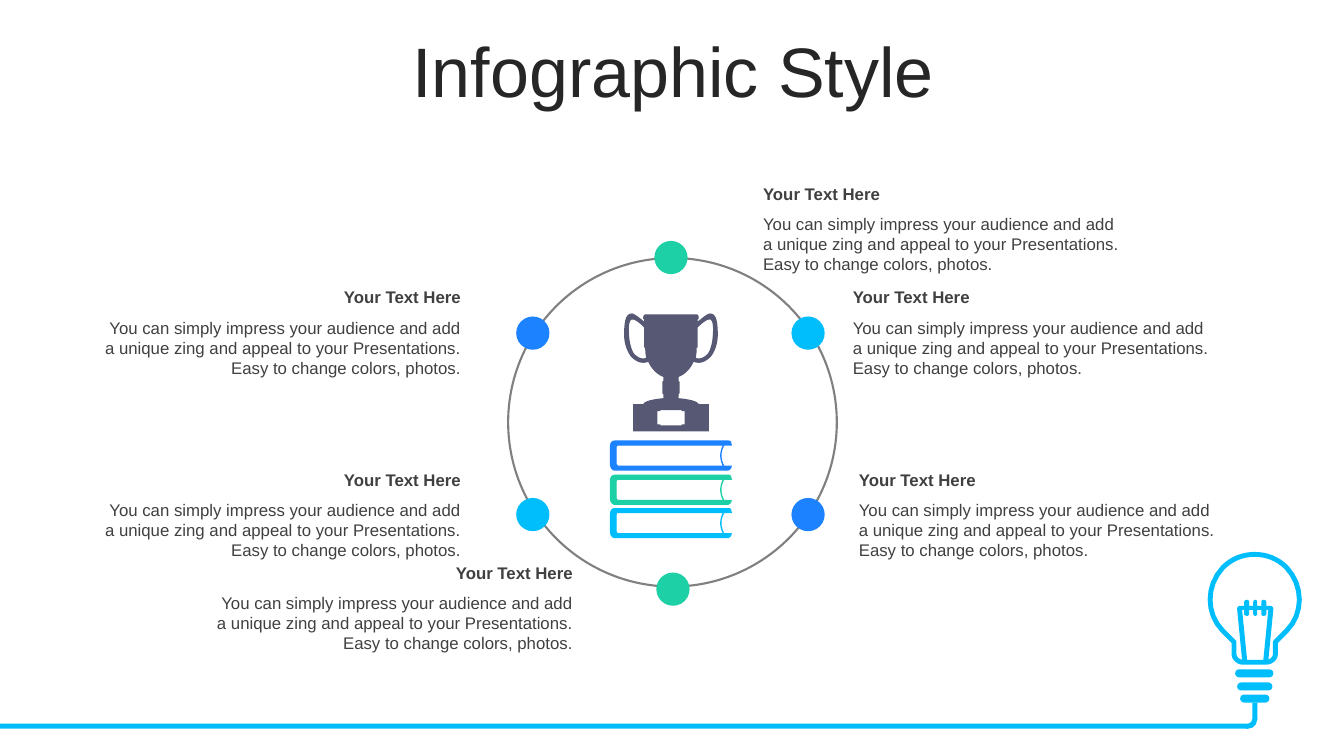
"""Builds the "Infographic Style" slide: six captions around a ring with a trophy, plus a light bulb."""
from dataclasses import dataclass

from pptx import Presentation
from pptx.dml.color import RGBColor
from pptx.enum.shapes import MSO_SHAPE
from pptx.enum.text import MSO_ANCHOR, MSO_AUTO_SIZE, PP_ALIGN
from pptx.util import Emu, Pt

PX = 9144
CURVE_STEPS = 8
LEFT, CENTER, RIGHT = PP_ALIGN.LEFT, PP_ALIGN.CENTER, PP_ALIGN.RIGHT
MIDDLE = MSO_ANCHOR.MIDDLE
FIT_SHAPE, NO_FIT = MSO_AUTO_SIZE.SHAPE_TO_FIT_TEXT, MSO_AUTO_SIZE.NONE
RECT, ROUND_RECT = MSO_SHAPE.RECTANGLE, MSO_SHAPE.ROUNDED_RECTANGLE
OVAL, ARC = MSO_SHAPE.OVAL, MSO_SHAPE.BLOCK_ARC

FONT = "Arial"
CYAN, BLUE, GREEN = "00BDFB", "1C82FF", "1ED0A6"
SLATE, GREY, WHITE = "565874", "808080", "FFFFFF"
TITLE_INK, TEXT_INK = "262626", "404040"

HEADING = "Your Text Here"
BODY = ("You can simply impress your audience and add a unique zing and appeal "
        "to your Presentations. Easy to change colors, photos.")

Point = tuple[float, float]
Outline = list[Point]
Segments = list[tuple[int, ...]]


@dataclass(frozen=True)
class Caption:
    x: int
    y: int
    align: PP_ALIGN


@dataclass(frozen=True)
class Preset:
    kind: MSO_SHAPE
    x: int
    y: int
    w: int
    h: int
    fill: str | None = CYAN
    line: str | None = None
    adjust: tuple[float, ...] = ()


CAPTIONS = [
    Caption(747, 177, LEFT), Caption(836, 280, LEFT), Caption(842, 461, LEFT),
    Caption(93, 280, RIGHT), Caption(93, 461, RIGHT), Caption(204, 553, RIGHT),
]
RING = [Preset(OVAL, 504, 256, 326, 326, None, GREY)] + [
    Preset(OVAL, x, y, 33, 33, color) for x, y, color in (
        (649, 239, GREEN), (651, 568, GREEN), (785, 494, BLUE),
        (785, 314, CYAN), (512, 494, CYAN), (512, 314, BLUE))
]
BULB_BASE = [Preset(ROUND_RECT, x, y, w, 8, adjust=(0.5,))
             for x, y, w in ((1225, 664, 38), (1227, 677, 35), (1230, 689, 29))]
CABLE = [
    Preset(RECT, 0, 718, 1237, 5),
    Preset(RECT, 1242, 697, 5, 17),
    Preset(ARC, 1228, 704, 19, 19, adjust=(213.39, 60.92, 0.27)),
]

GLASS_HALF: Segments = [
    (1244, 550), (1256, 550, 1267, 554, 1276, 563), (1293, 581, 1293, 609, 1276, 626),
    (1265, 637), (1265, 649), (1265, 653, 1261, 657, 1256, 657)]
FILAMENT_HALF: Segments = [
    (1245, 595), (1246, 595, 1247, 596, 1247, 598), (1247, 601), (1251, 601), (1251, 598),
    (1251, 596, 1252, 595, 1253, 595), (1255, 595, 1256, 596, 1256, 598), (1256, 601),
    (1260, 601), (1262, 601, 1263, 603, 1263, 604), (1258, 655),
    (1258, 657, 1256, 658, 1255, 657), (1254, 657, 1253, 656, 1253, 655), (1258, 605),
    (1256, 605), (1256, 609), (1256, 610, 1255, 611, 1253, 611),
    (1252, 611, 1251, 610, 1251, 609), (1251, 605), (1247, 605), (1247, 609),
    (1247, 610, 1246, 611, 1245, 611)]
TROPHY_HALF: Segments = [
    (691, 312), (692, 312, 693, 313, 693, 315), (693, 316, 693, 317, 692, 317), (692, 319),
    (695, 317, 700, 312, 704, 311), (709, 311, 712, 315, 712, 332),
    (712, 341, 709, 349, 705, 354), (701, 358, 695, 362, 688, 359),
    (685, 366, 679, 372, 673, 374), (673, 378), (674, 378, 674, 379, 674, 380), (674, 389),
    (674, 390, 674, 391, 673, 391), (673, 394), (673, 394, 673, 395, 672, 395),
    (684, 396, 692, 398, 693, 401), (703, 401), (703, 428)]
PLATE_HALF: Segments = [(676, 407), (676, 408), (679, 408), (679, 421), (676, 421), (676, 422)]
HANDLE_HOLE: Segments = [
    (704, 317), (701, 317, 697, 320, 692, 325), (692, 345), (691, 345),
    (691, 348, 691, 351, 690, 355), (695, 357, 699, 354, 702, 351),
    (705, 347, 707, 338, 707, 332), (708, 321, 706, 317, 704, 317)]
PAGES: Segments = [(611, 441), (718, 441), (714, 449, 714, 455, 718, 463), (611, 463)]
COVER: Segments = [
    (610, 437), (721, 437), (723, 437, 724, 437, 725, 438), (726, 442), (614, 442),
    (612, 442, 611, 443, 611, 445), (611, 459), (611, 460, 612, 462, 614, 462), (726, 462),
    (725, 465), (724, 466, 723, 467, 721, 467), (610, 467), (607, 467, 605, 464, 605, 461),
    (605, 443), (605, 439, 607, 437, 610, 437)]


def px(n: float) -> Emu:
    return Emu(round(n * PX))


def rgb(color: str) -> RGBColor:
    return RGBColor.from_string(color)


def flatten(segments: Segments) -> Outline:
    points: Outline = []
    for seg in segments:
        if len(seg) == 2:
            points.append(seg)
            continue
        nodes = [points[-1], seg[:2], seg[2:4], seg[4:]]
        for i in range(1, CURVE_STEPS + 1):
            t = i / CURVE_STEPS
            weights = ((1 - t) ** 3, 3 * t * (1 - t) ** 2, 3 * t * t * (1 - t), t ** 3)
            points.append(tuple(sum(w * n[k] for w, n in zip(weights, nodes)) for k in (0, 1)))
    return points


def mirror(points: Outline, span: int) -> Outline:
    return [(span - x, y) for x, y in reversed(points)]


def symmetric(half: Segments, span: int) -> Outline:
    points = flatten(half)
    return points + mirror(points, span)


def paint(sp, fill: str | None, line: str | None = None, weight: float = 1) -> None:
    sp.shadow.inherit = False
    if fill:
        sp.fill.solid()
        sp.fill.fore_color.rgb = rgb(fill)
    else:
        sp.fill.background()
    if line:
        sp.line.color.rgb = rgb(line)
        sp.line.width = Pt(weight)
    else:
        sp.line.fill.background()


def add_outline(s, outlines: list[Outline], fill: str, line: str | None = None,
                weight: float = 1) -> None:
    scaled = [[(px(x), px(y)) for x, y in points] for points in outlines]
    builder = s.shapes.build_freeform(*scaled[0][0], scale=1.0)
    builder.add_line_segments(scaled[0][1:], close=True)
    for points in scaled[1:]:
        builder.move_to(*points[0])
        builder.add_line_segments(points[1:], close=True)
    paint(builder.convert_to_shape(), fill, line, weight)


def add_preset(s, preset: Preset) -> None:
    sp = s.shapes.add_shape(preset.kind, px(preset.x), px(preset.y), px(preset.w), px(preset.h))
    for i, value in enumerate(preset.adjust):
        sp.adjustments[i] = value
    paint(sp, preset.fill, preset.line, 1.5)


def write(sp, text: str, *, size: int = 12, color: str = TEXT_INK, bold: bool = False,
          align: PP_ALIGN = LEFT, fit: MSO_AUTO_SIZE = FIT_SHAPE):
    tf = sp.text_frame
    tf.word_wrap = True
    tf.auto_size = fit
    p = tf.paragraphs[0]
    p.alignment = align
    r = p.add_run()
    r.text = text
    r.font.name, r.font.size, r.font.bold = FONT, Pt(size), bold
    r.font.color.rgb = rgb(color)
    return p


def add_title(s) -> None:
    sp = s.shapes.title
    sp.left, sp.top, sp.width, sp.height = px(35), px(37), px(1266), px(79)
    p = write(sp, "Infographic Style", size=50, color=TITLE_INK, align=CENTER, fit=NO_FIT)
    p.line_spacing, p.space_before = 0.8, Pt(10)
    sp.text_frame.vertical_anchor = MIDDLE


def add_caption(s, caption: Caption) -> None:
    for text, dy, h, bold in ((BODY, 30, 71, False), (HEADING, 0, 30, True)):
        sp = s.shapes.add_textbox(px(caption.x), px(caption.y + dy), px(374), px(h))
        write(sp, text, bold=bold, align=caption.align)


def add_book(s, dy: int, color: str) -> None:
    pages, cover = ([(x, y + dy) for x, y in flatten(part)] for part in (PAGES, COVER))
    add_outline(s, [pages], WHITE, color)
    add_outline(s, [cover], color)


def main() -> None:
    prs = Presentation()
    prs.slide_width, prs.slide_height = px(1333), px(750)
    s = prs.slides.add_slide(prs.slide_layouts[5])
    add_title(s)
    add_outline(s, [symmetric(GLASS_HALF, 2489)], WHITE, CYAN, 3.5)
    add_outline(s, [symmetric(FILAMENT_HALF, 2490)], CYAN)
    for preset in BULB_BASE + CABLE + RING:
        add_preset(s, preset)
    for caption in CAPTIONS:
        add_caption(s, caption)
    for i, color in enumerate((BLUE, GREEN, CYAN)):
        add_book(s, round(33.5 * i), color)
    hole = flatten(HANDLE_HOLE)
    add_outline(s, [symmetric(TROPHY_HALF, 1331), symmetric(PLATE_HALF, 1331),
                    hole, mirror(hole, 1331)], SLATE)
    prs.save("out.pptx")


if __name__ == "__main__":
    main()
